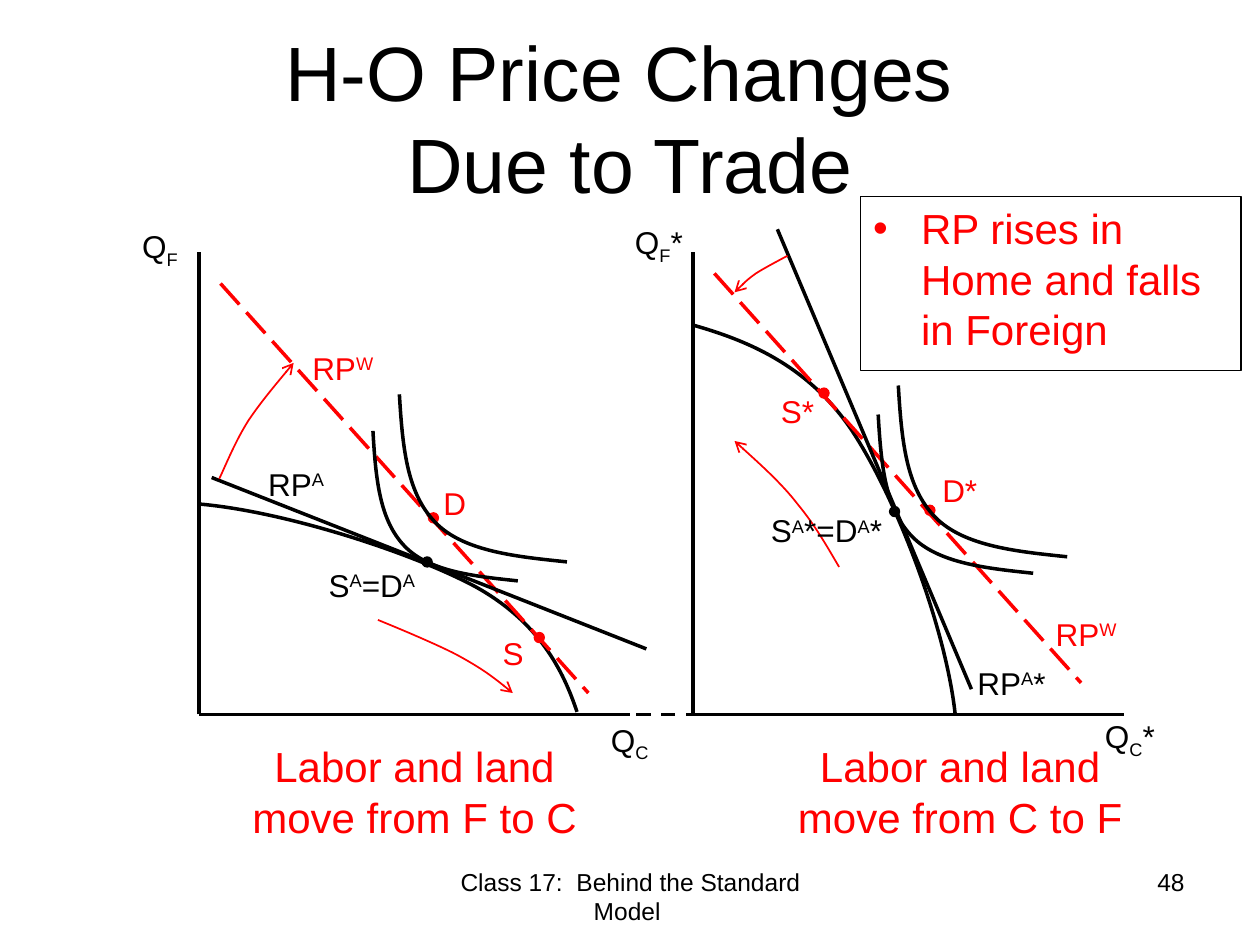
"""Build the slide on Heckscher-Ohlin price changes due to trade."""
from lxml.etree import SubElement
from pptx import Presentation
from pptx.dml.color import RGBColor
from pptx.enum.dml import MSO_LINE
from pptx.enum.shapes import MSO_CONNECTOR, MSO_SHAPE
from pptx.enum.text import MSO_ANCHOR, MSO_AUTO_SIZE, PP_ALIGN
from pptx.oxml.ns import qn
from pptx.util import Inches, Pt

BLACK = RGBColor(0x00, 0x00, 0x00)
RED = RGBColor(0xFF, 0x00, 0x00)
FONT = "Arial"
SUB, SUPER = -25000, 30000
DOT = 0.08
INDIFFERENCE = [(1, 1), (0.71, 0.97), (0.39, 0.94), (0.22, 0.77),
                (0.05, 0.6), (0.02, 0.34), (0, 0)]


def place(shape, left, top, width, height):
    """Move and size a shape, in inches."""
    shape.left, shape.top = Inches(left), Inches(top)
    shape.width, shape.height = Inches(width), Inches(height)


def add_run(paragraph, text, size, color, baseline=0):
    """Add one formatted run, raised or lowered by its baseline."""
    run = paragraph.add_run()
    run.text = text
    run.font.name = FONT
    run.font.size = Pt(size)
    run.font.color.rgb = color
    if baseline:
        run._r.get_or_add_rPr().set("baseline", str(baseline))


def add_label(slide, box, parts, color=BLACK, size=18, align=PP_ALIGN.LEFT, wrap=False):
    """Add a text box whose parts are (text, baseline) pairs."""
    frame = slide.shapes.add_textbox(*map(Inches, box)).text_frame
    frame.word_wrap = wrap
    paragraph = frame.paragraphs[0]
    paragraph.alignment = align
    for text, baseline in parts:
        add_run(paragraph, text, size, color, baseline)


def add_line(slide, start, end, color=BLACK, dash=None):
    """Add a straight line, solid unless a dash is given."""
    line = slide.shapes.add_connector(
        MSO_CONNECTOR.STRAIGHT, *map(Inches, (*start, *end)))
    line.line.color.rgb = color
    line.line.width = Pt(2)
    if dash:
        line.line.dash_style = dash
    SubElement(line._element.spPr, qn("a:effectLst"))


def bend(curve):
    """Turn each three line segments of an outline into one cubic segment."""
    segments = list(curve._element.iter(qn("a:lnTo")))
    for i in range(0, len(segments), 3):
        first, *others = segments[i:i + 3]
        first.tag = qn("a:cubicBezTo")
        for other in others:
            first.append(other[0])
            other.getparent().remove(other)


def add_curve(slide, controls, color=BLACK, width=2, arrow=False):
    """Add an open curve through chained cubic control points."""
    start, *rest = [tuple(map(Inches, point)) for point in controls]
    builder = slide.shapes.build_freeform(*start)
    builder.add_line_segments(rest, close=False)
    curve = builder.convert_to_shape()
    bend(curve)
    curve.shadow.inherit = False
    curve.fill.background()
    curve.line.color.rgb = color
    curve.line.width = Pt(width)
    if arrow:
        SubElement(curve.line._get_or_add_ln(), qn("a:tailEnd"), type="arrow")


def add_indifference(slide, left, top, width, height):
    """Add an indifference curve fitted to a box."""
    add_curve(slide, [(left + x * width, top + y * height) for x, y in INDIFFERENCE])


def add_dot(slide, left, top, color):
    """Add an equilibrium point."""
    dot = slide.shapes.add_shape(
        MSO_SHAPE.OVAL, *map(Inches, (left, top, DOT, DOT)))
    dot.shadow.inherit = False
    dot.fill.solid()
    dot.fill.fore_color.rgb = color
    dot.line.color.rgb = color
    dot.line.width = Pt(0.75)


def add_axes(slide, left):
    """Add the two axes of one country."""
    origin = (left, 5.67)
    add_line(slide, origin, (left + 3.42, 5.67))
    add_line(slide, origin, (left, 2))


def fill_title(title):
    """Write the two-line title."""
    place(title, 0.5, 0.3, 9, 1.25)
    frame = title.text_frame
    frame.auto_size = MSO_AUTO_SIZE.NONE
    frame.vertical_anchor = MSO_ANCHOR.MIDDLE
    paragraph = frame.paragraphs[0]
    paragraph.alignment = PP_ALIGN.CENTER
    add_run(paragraph, "H-O Price Changes ", 44, BLACK)
    paragraph.add_line_break()
    add_run(paragraph, "Due to Trade", 44, BLACK)


def fill_finding(body):
    """Write the framed bullet on relative prices."""
    place(body, 6.83, 1.56, 3.02, 1.38)
    body.line.color.rgb = BLACK
    body.line.width = Pt(0.75)
    body.text_frame.auto_size = MSO_AUTO_SIZE.NONE
    paragraph = body.text_frame.paragraphs[0]
    properties = paragraph._p.get_or_add_pPr()
    properties.set("marL", str(Inches(0.38)))
    properties.set("indent", str(Inches(-0.38)))
    SubElement(properties, qn("a:buChar"), char="•")
    add_run(paragraph, "RP rises in Home and falls in Foreign", 24, RED)


def draw_curves(slide):
    """Draw axes, frontiers, price lines and indifference curves."""
    for left in (1.58, 5.5):
        add_axes(slide, left)
    add_line(slide, (5.75, 5.67), (4.92, 5.67), dash=MSO_LINE.DASH)
    add_curve(slide, [(1.58, 4), (2.27, 4.06), (3.28, 4.39), (3.78, 4.66),
                      (4.28, 4.94), (4.47, 5.32), (4.58, 5.65)])
    add_curve(slide, [(7.58, 5.66), (7.5, 4.95), (7.1, 3.92), (6.75, 3.4),
                      (6.4, 2.89), (5.92, 2.7), (5.5, 2.58)])
    add_line(slide, (1.75, 2.25), (4.67, 5.5), RED, MSO_LINE.LONG_DASH)
    add_line(slide, (5.67, 2.17), (8.58, 5.42), RED, MSO_LINE.LONG_DASH)
    for left, top in ((4.24, 5.02), (6.5, 3.08), (3.4, 4.07), (7.34, 4.01)):
        add_dot(slide, left, top, RED)
    for box in ((3.17, 3.13, 1.33, 1.33), (7.13, 3.06, 1.34, 1.36),
                (6.97, 3.29, 1.23, 1.26), (2.96, 3.42, 1.15, 1.19)):
        add_indifference(slide, *box)
    for left, top in ((3.35, 4.42), (7.06, 4.02)):
        add_dot(slide, left, top, BLACK)
    add_line(slide, (1.68, 3.79), (5.13, 5.15))
    add_line(slide, (6.17, 1.82), (7.71, 5.47))


def draw_shifts(slide):
    """Draw the arrows for changes in prices and production."""
    shifts = (
        [(1.74, 3.8), (1.81, 3.65), (1.87, 3.5), (1.97, 3.34),
         (2.07, 3.19), (2.33, 2.88), (2.33, 2.88)],
        [(6.25, 2.03), (6.25, 2.03), (6.06, 2.13), (6, 2.17),
         (5.93, 2.22), (5.88, 2.27), (5.83, 2.32)],
        [(3, 4.92), (3, 4.92), (3.47, 5.11), (3.65, 5.21),
         (3.83, 5.31), (3.95, 5.4), (4.07, 5.5)],
        [(6.66, 4.5), (6.56, 4.33), (6.47, 4.17), (6.33, 4),
         (6.2, 3.83), (5.83, 3.5), (5.83, 3.5)],
    )
    for controls in shifts:
        add_curve(slide, controls, RED, 1, arrow=True)


def write_labels(slide):
    """Write the axis, point, price and caption texts."""
    for left, top, height, good, star in (
            (4.75, 5.67, 0.4, "C", ""), (1.03, 1.75, 0.71, "F", ""),
            (8.67, 5.64, 0.4, "C", "*"), (4.94, 1.72, 0.71, "F", "*")):
        parts = [("Q", 0), (good, SUB)] + ([(star, 0)] if star else [])
        add_label(slide, (left, top, 0.75, height), parts, wrap=True)
    autarky, world = ("A", SUPER), ("W", SUPER)
    labels = (
        (2.51, 4.44, 0.93, [("S", 0), autarky, ("=D", 0), autarky], BLACK),
        (6.02, 4.01, 1.12, [("S", 0), autarky, ("*=D", 0), autarky, ("*", 0)], BLACK),
        (2.03, 3.64, 0.66, [("RP", 0), autarky], BLACK),
        (7.66, 5.22, 0.76, [("RP", 0), autarky, ("*", 0)], BLACK),
        (2.38, 2.72, 0.71, [("RP", 0), world], RED),
        (8.28, 4.83, 0.71, [("RP", 0), world], RED),
        (3.42, 3.79, 0.38, [("D", 0)], RED),
        (7.38, 3.69, 0.48, [("D*", 0)], RED),
        (3.89, 4.98, 0.37, [("S", 0)], RED),
        (6.1, 3.06, 0.47, [("S*", 0)], RED),
    )
    for left, top, width, parts, color in labels:
        add_label(slide, (left, top, width, 0.4), parts, color)
    for left, move in ((1.75, "F to C"), (6.08, "C to F")):
        add_label(slide, (left, 5.83, 3.08, 0.91), [(f"Labor and land move from {move}", 0)],
                  RED, 24, PP_ALIGN.CENTER, True)
    add_label(slide, (3.42, 6.83, 3.17, 0.52), [("Class 17:  Behind the Standard Model ", 0)],
              size=14, align=PP_ALIGN.CENTER, wrap=True)
    add_label(slide, (7.17, 6.83, 2.33, 0.52), [("48", 0)],
              size=14, align=PP_ALIGN.RIGHT, wrap=True)


def main():
    """Assemble and save the slide."""
    deck = Presentation()
    deck.slide_width, deck.slide_height = Inches(10), Inches(7.5)
    slide = deck.slides.add_slide(deck.slide_layouts[1])
    fill_title(slide.shapes.title)
    fill_finding(slide.placeholders[1])
    draw_curves(slide)
    draw_shifts(slide)
    write_labels(slide)
    deck.save("out.pptx")


if __name__ == "__main__":
    main()
